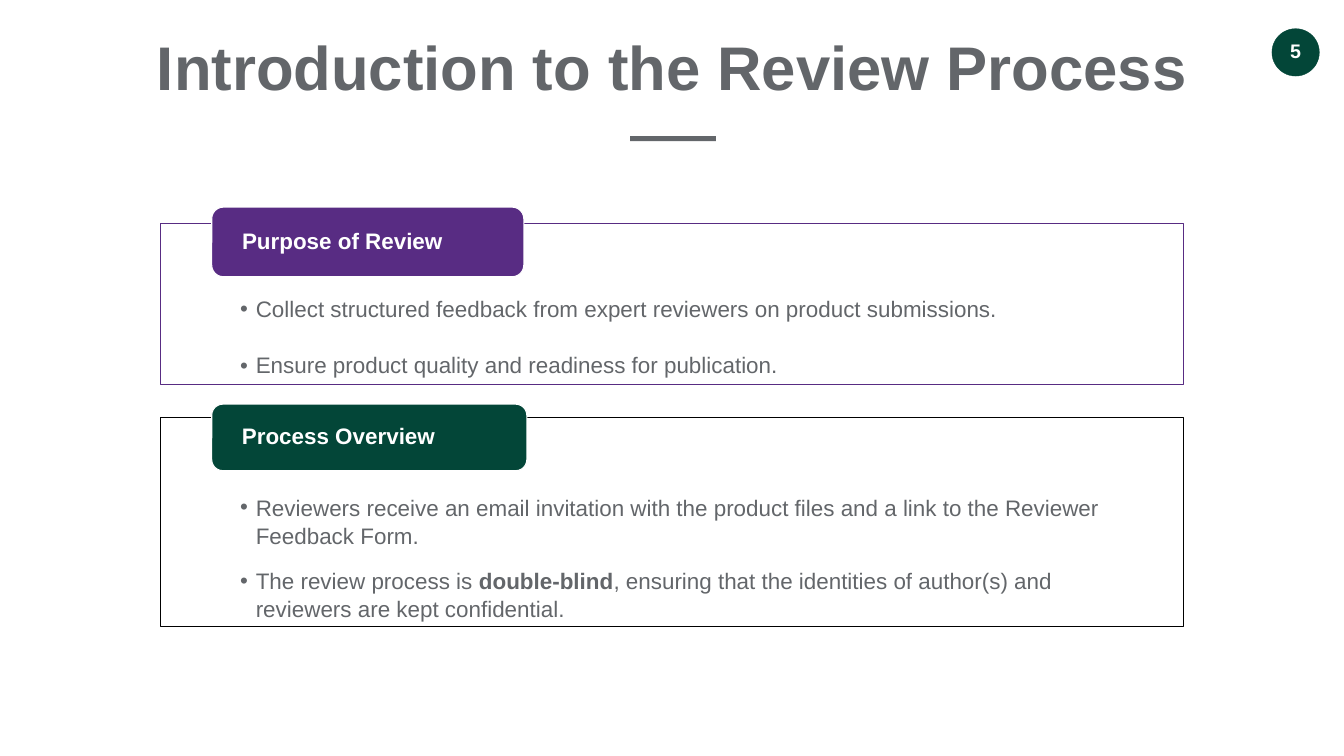
from typing import NamedTuple

from lxml.etree import SubElement
from pptx import Presentation
from pptx.dml.color import RGBColor
from pptx.enum.shapes import MSO_SHAPE as Shape
from pptx.enum.text import MSO_ANCHOR as Anchor, MSO_AUTO_SIZE as AutoSize, PP_ALIGN as Align
from pptx.oxml.ns import qn
from pptx.util import Pt

WHITE = RGBColor(0xFF, 0xFF, 0xFF)
BLACK = RGBColor(0x00, 0x00, 0x00)
GREY = RGBColor(0x63, 0x66, 0x6A)
PURPLE = RGBColor(0x58, 0x2C, 0x83)
GREEN = RGBColor(0x03, 0x46, 0x38)

PANEL_LEFT, PANEL_WIDTH = 229, 1461.6
TAB_LEFT = 302.4
BULLET_INDENT = 22.5


class Box(NamedTuple):
    left: float
    top: float
    width: float
    height: float


class Run(NamedTuple):
    text: str
    bold: bool = False


class Section(NamedTuple):
    heading: str
    color: RGBColor
    outline: RGBColor
    panel: Box
    tab: Box
    line_spacing: float
    bullet_gap: float
    bullets: list[list[Run]]


SECTIONS = [
    Section(
        "Purpose of Review", PURPLE, PURPLE,
        Box(PANEL_LEFT, 319.7, PANEL_WIDTH, 229.7), Box(TAB_LEFT, 295.9, 445.7, 99.4),
        0.9, 45.5,
        [[Run("Collect structured feedback from expert reviewers on product submissions.")],
         [Run("Ensure product quality and readiness for publication.")]],
    ),
    Section(
        "Process Overview", GREEN, BLACK,
        Box(PANEL_LEFT, 596.9, PANEL_WIDTH, 298.1), Box(TAB_LEFT, 577.4, 450, 95),
        1.05, 24,
        [[Run("Reviewers receive an email invitation with the product files and a link "
              "to the Reviewer Feedback Form.")],
         [Run("The review process is "), Run("double-blind", True),
          Run(", ensuring that the identities of author(s) and reviewers are kept confidential.")]],
    ),
]


def add_box(slide, kind, box: Box, fill: RGBColor, line: RGBColor | None = None,
            line_width: float = 1):
    sp = slide.shapes.add_shape(kind, *map(Pt, box))
    sp.shadow.inherit = False
    sp.fill.solid()
    sp.fill.fore_color.rgb = fill
    if line is None:
        sp.line.fill.background()
    else:
        sp.line.color.rgb = line
        sp.line.width = Pt(line_width)
    return sp


def set_frame(tf, anchor, left: float, top: float, right: float, bottom: float) -> None:
    values = dict(vertical_anchor=anchor, word_wrap=True, auto_size=AutoSize.NONE,
                  margin_left=Pt(left), margin_top=Pt(top),
                  margin_right=Pt(right), margin_bottom=Pt(bottom))
    for name, value in values.items():
        setattr(tf, name, value)


def add_run(p, text: str, size: float, color: RGBColor, bold: bool = True) -> None:
    r = p.add_run()
    r.text = text
    for name, value in dict(name="Arial", size=Pt(size), bold=bold).items():
        setattr(r.font, name, value)
    r.font.color.rgb = color


def add_bullet(p) -> None:
    pPr = p._p.get_or_add_pPr()
    pPr.set("marL", str(Pt(BULLET_INDENT)))
    pPr.set("indent", str(-Pt(BULLET_INDENT)))
    SubElement(pPr, qn("a:buFont"), typeface="Arial")
    SubElement(pPr, qn("a:buChar"), char="•")


def add_section(slide, section: Section) -> None:
    panel = add_box(slide, Shape.RECTANGLE, section.panel, WHITE, section.outline)
    tf = panel.text_frame
    set_frame(tf, Anchor.TOP, 113.8, 106.6, 113.8, 18)
    for i, runs in enumerate(section.bullets):
        p = tf.add_paragraph() if i else tf.paragraphs[0]
        p.level = 1
        p.alignment = Align.LEFT
        p.line_spacing = section.line_spacing
        if i:
            p.space_before = Pt(section.bullet_gap)
        add_bullet(p)
        for run in runs:
            add_run(p, run.text, 32, GREY, run.bold)

    tab = add_box(slide, Shape.ROUNDED_RECTANGLE, section.tab, section.color, WHITE, 1.5)
    set_frame(tab.text_frame, Anchor.MIDDLE, 38.4, 0, 38.4, 0)
    p = tab.text_frame.paragraphs[0]
    p.alignment = Align.LEFT
    p.line_spacing = 0.9
    add_run(p, section.heading, 32, WHITE)


def add_page_number(slide, number: int) -> None:
    badge = add_box(slide, Shape.OVAL, Box(1816.6, 41, 67.7, 67.7), GREEN, GREEN, 0.5)
    set_frame(badge.text_frame, Anchor.MIDDLE, 0, 0, 0, 4)
    p = badge.text_frame.paragraphs[0]
    p.alignment = Align.CENTER
    add_run(p, str(number), 28, WHITE)


def set_title(slide, text: str) -> None:
    title = slide.shapes.title
    title.left, title.top, title.width, title.height = map(Pt, Box(196.6, 38.2, 1526.4, 113.8))
    tf = title.text_frame
    set_frame(tf, Anchor.TOP, 7.2, 3.6, 7.2, 3.6)
    p = tf.paragraphs[0]
    p.alignment = Align.CENTER
    add_run(p, text, 88, GREY)


def main() -> None:
    prs = Presentation()
    prs.slide_width, prs.slide_height = Pt(1919.52), Pt(1080)
    slide = prs.slides.add_slide(prs.slide_layouts[5])
    add_page_number(slide, 5)
    set_title(slide, "Introduction to the Review Process")
    add_box(slide, Shape.RECTANGLE, Box(900, 194.4, 122.4, 7.2), GREY)
    for section in SECTIONS:
        add_section(slide, section)
    prs.save("out.pptx")


if __name__ == "__main__":
    main()
